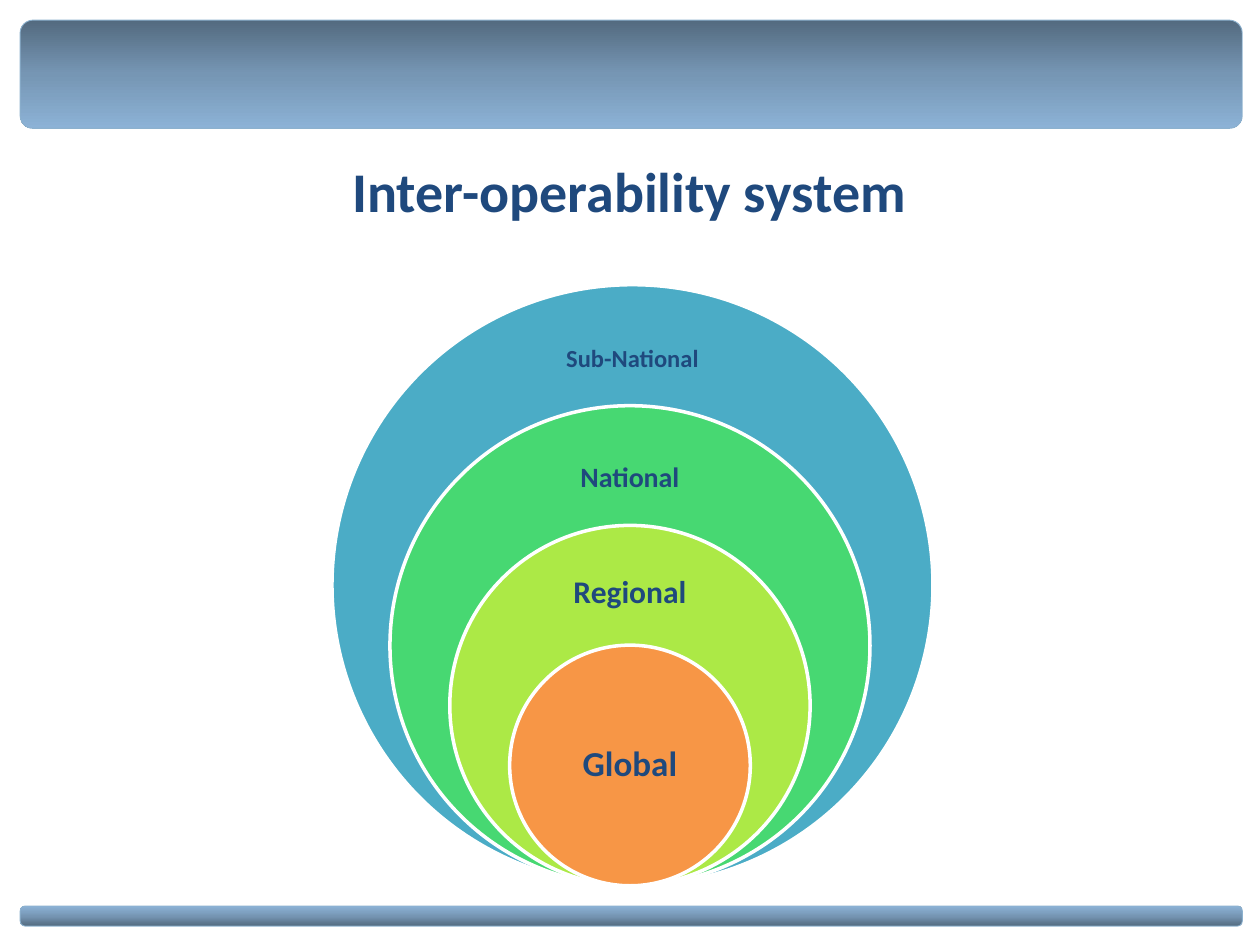
from copy import deepcopy

from pptx import Presentation
from pptx.dml.color import RGBColor
from pptx.enum import shapes, text
from pptx.util import Inches, Pt

HUES = {
    "navy": "1F497D", "white": "FFFFFF", "edge": "8CB1CE",
    "dark": "536A7F", "mid": "7696B4", "light": "8CB2D6",
    "teal": "4BACC6", "green": "47D872", "lime": "ACE946", "orange": "F79646",
}


def rgb(name):
    return RGBColor.from_string(HUES[name])


def label(words, box, size, inset):
    """Add a centred bold line of text in a box given in inches."""
    frame = slide.shapes.add_textbox(*map(Inches, box)).text_frame
    frame.word_wrap = True
    frame.vertical_anchor = text.MSO_ANCHOR.MIDDLE
    frame.margin_left = frame.margin_right = Inches(inset)
    frame.margin_top = frame.margin_bottom = Inches(inset)
    para = frame.paragraphs[0]
    para.text = words
    para.alignment = text.PP_ALIGN.CENTER
    para.font.name = "Calibri"
    para.font.size = Pt(size)
    para.font.bold = True
    para.font.color.rgb = rgb("navy")
    return para


deck = Presentation()
deck.slide_width, deck.slide_height = Inches(10), Inches(7.5)
slide = deck.slides.add_slide(deck.slide_layouts[6])

# Header and footer bars: the footer is turned so its dark side is below
for top, height, curve, turn in [(0.16, 0.86, 0.12, 0), (7.19, 0.16, 0.25, 180)]:
    bar = slide.shapes.add_shape(
        shapes.MSO_SHAPE.ROUNDED_RECTANGLE,
        Inches(0.16), Inches(top), Inches(9.7), Inches(height))
    bar.adjustments[0] = curve
    bar.rotation = turn
    bar.shadow.inherit = False
    bar.fill.gradient()
    bar.fill.gradient_angle = 270
    first = bar.fill._fill._gradFill.gsLst[0]
    first.addnext(deepcopy(first))
    for stop, place, hue in zip(bar.fill.gradient_stops, (0, 0.5, 1),
                                ("dark", "mid", "light")):
        stop.position = place
        stop.color.rgb = rgb(hue)
    bar.line.color.rgb = rgb("edge")
    bar.line.width = Pt(0.5)

label("Inter-operability system", (0.23, 1.08, 9.53, 0.86), 32, 0.05)

# Nested circles share their lowest point
base = 7.03
rings = [  # name, hue, diameter, centre, label top, label height, size, inset
    ("Sub-National", "teal", 4.77, 5.02, 2.5, 0.71, 14, 0.11),
    ("National", "green", 3.81, 5, 3.45, 0.69, 16, 0.12),
    ("Regional", "lime", 2.86, 5, 4.39, 0.64, 18, 0.14),
    ("Global", "orange", 1.91, 5, 5.6, 0.95, 20, 0.16),
]
for name, hue, wide, mid, top, height, size, inset in rings:
    ring = slide.shapes.add_shape(
        shapes.MSO_SHAPE.OVAL, Inches(mid - wide / 2), Inches(base - wide),
        Inches(wide), Inches(wide))
    ring.shadow.inherit = False
    ring.fill.solid()
    ring.fill.fore_color.rgb = rgb(hue)
    ring.line.color.rgb = rgb("white")
    ring.line.width = Pt(2)
    para = label(name, (mid - 0.67, top, 1.34, height), size, inset)
    para.line_spacing = 0.9

deck.save("out.pptx")
